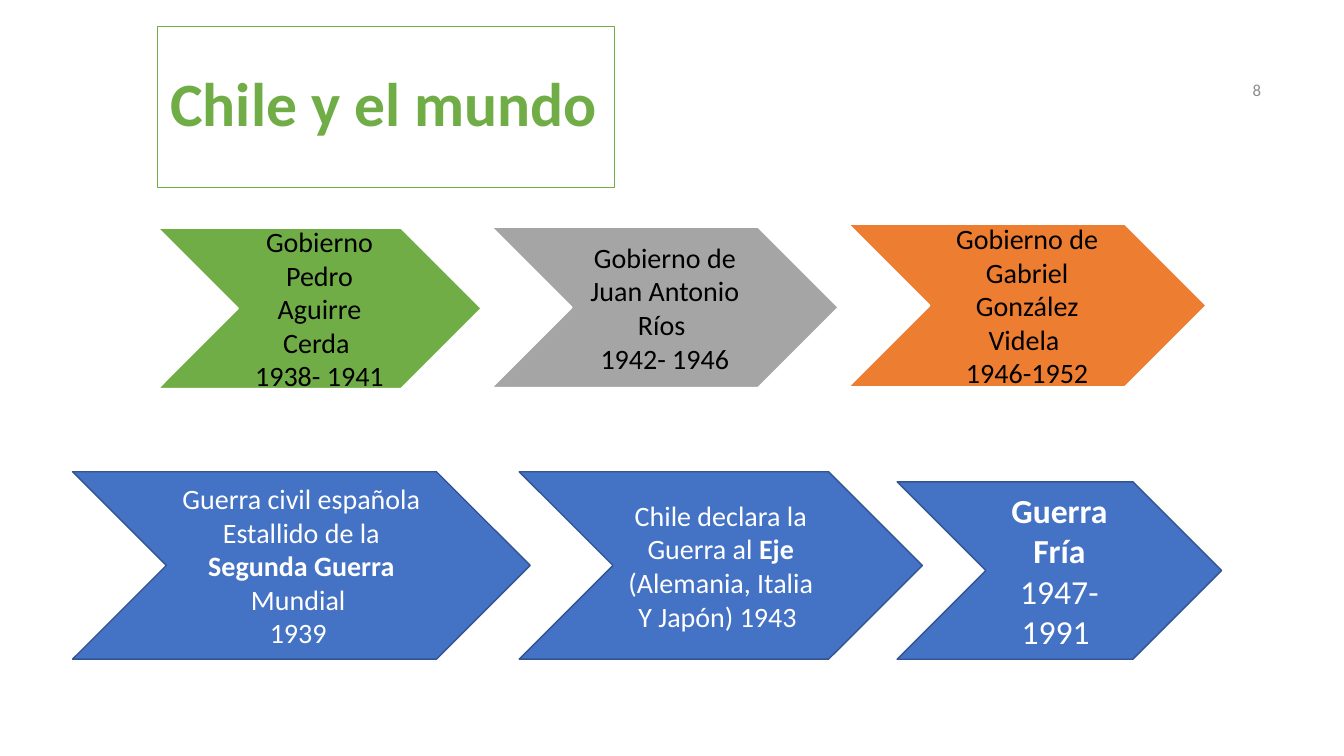
"""Build the slide "Chile y el mundo": Chilean governments above world events."""
import pptx
import pptx.dml.color
import pptx.enum.shapes
import pptx.enum.text
import pptx.util

SLIDE_WIDTH, SLIDE_HEIGHT = 13.33, 7.5
FONT = "Calibri"
COLOURS = {
    "green": "70AD47", "grey": "A5A5A5", "orange": "ED7D31", "blue": "4472C4",
    "navy": "325491", "white": "FFFFFF", "black": "000000", "number": "8C8C8C",
}

# Places are left, top, width and height in percent of the slide.
TITLE = ("Chile y el mundo", (11.7, 3.47, 34.05, 21.33))
PAGE_NUMBER = ("8", (88.8, 8.13, 6, 7.6))

# Each paragraph is a list of (text, bold) runs.
GOVERNMENTS = [
    ((11.7, 30.13, 24.15, 21.33), "green", 20,
     [[("Gobierno Pedro Aguirre Cerda ", False)], [("1938- 1941", False)]]),
    ((36.53, 30, 25.88, 21.33), "grey", 20,
     [[("Gobierno de Juan Antonio Ríos ", False)], [("1942- 1946", False)]]),
    ((63.08, 29.6, 26.7, 21.6), "orange", 20,
     [[("Gobierno de Gabriel González Videla ", False)], [("1946-1952", False)]]),
]
WORLD_EVENTS = [
    ((5.4, 62.4, 34.05, 24.8), "blue", 20,
     [[("Guerra civil española", False)],
      [("Estallido de la ", False), ("Segunda Guerra ", True), ("Mundial ", False)],
      [("1939 ", False)]]),
    ((38.63, 62.4, 30, 24.8), "blue", 20,
     [[("Chile declara la Guerra al ", False), ("Eje", True),
       (" (Alemania, Italia Y Japón) 1943 ", False)]]),
    ((66.75, 63.73, 24.15, 23.47), "blue", 24,
     [[("Guerra Fría", True)], [("1947- 1991 ", False)]]),
]
ROWS = [
    (GOVERNMENTS, "white", 1.5, "black"),
    (WORLD_EVENTS, "navy", 1, "white"),
]

SHAPES = pptx.enum.shapes.MSO_SHAPE
ALIGN = pptx.enum.text.PP_ALIGN


def colour(name):
    return pptx.dml.color.RGBColor.from_string(COLOURS[name])


def position(place):
    sides = (SLIDE_WIDTH, SLIDE_HEIGHT) * 2
    return [pptx.util.Inches(share * side / 100) for share, side in zip(place, sides)]


def add_box(page, preset, place, fill, line, weight):
    box = page.shapes.add_shape(preset, *position(place))
    box.shadow.inherit = False
    if fill:
        box.fill.solid()
        box.fill.fore_color.rgb = colour(fill)
    else:
        box.fill.background()
    box.line.color.rgb = colour(line)
    box.line.width = pptx.util.Pt(weight)
    return box


def write(box, paragraphs, size, ink, align, inset=None):
    frame = box.text_frame
    frame.word_wrap = True
    frame.vertical_anchor = pptx.enum.text.MSO_ANCHOR.MIDDLE
    if inset is not None:
        frame.margin_left = frame.margin_right = pptx.util.Inches(inset)
        frame.margin_top = frame.margin_bottom = pptx.util.Inches(inset)
    for index, spans in enumerate(paragraphs):
        para = frame.add_paragraph() if index else frame.paragraphs[0]
        para.alignment = align
        para.font.name = FONT
        para.font.size = pptx.util.Pt(size)
        para.font.color.rgb = colour(ink)
        for text, bold in spans:
            span = para.add_run()
            span.text = text
            span.font.bold = bold


def main():
    deck = pptx.Presentation()
    deck.slide_width = pptx.util.Inches(SLIDE_WIDTH)
    deck.slide_height = pptx.util.Inches(SLIDE_HEIGHT)
    page = deck.slides.add_slide(deck.slide_layouts[6])

    title, place = TITLE
    box = add_box(page, SHAPES.RECTANGLE, place, None, "green", 0.75)
    write(box, [[(title, True)]], 44, "green", ALIGN.LEFT, 0.13)
    heading = box.text_frame.paragraphs[0]
    heading.line_spacing = 0.9
    heading.space_before = pptx.util.Pt(8)

    number, place = PAGE_NUMBER
    box = page.shapes.add_textbox(*position(place))
    write(box, [[(number, False)]], 12, "number", ALIGN.RIGHT, 0.13)

    for chevrons, line, weight, ink in ROWS:
        for place, fill, size, paragraphs in chevrons:
            box = add_box(page, SHAPES.CHEVRON, place, fill, line, weight)
            write(box, paragraphs, size, ink, ALIGN.CENTER)

    deck.save("out.pptx")


if __name__ == "__main__":
    main()
